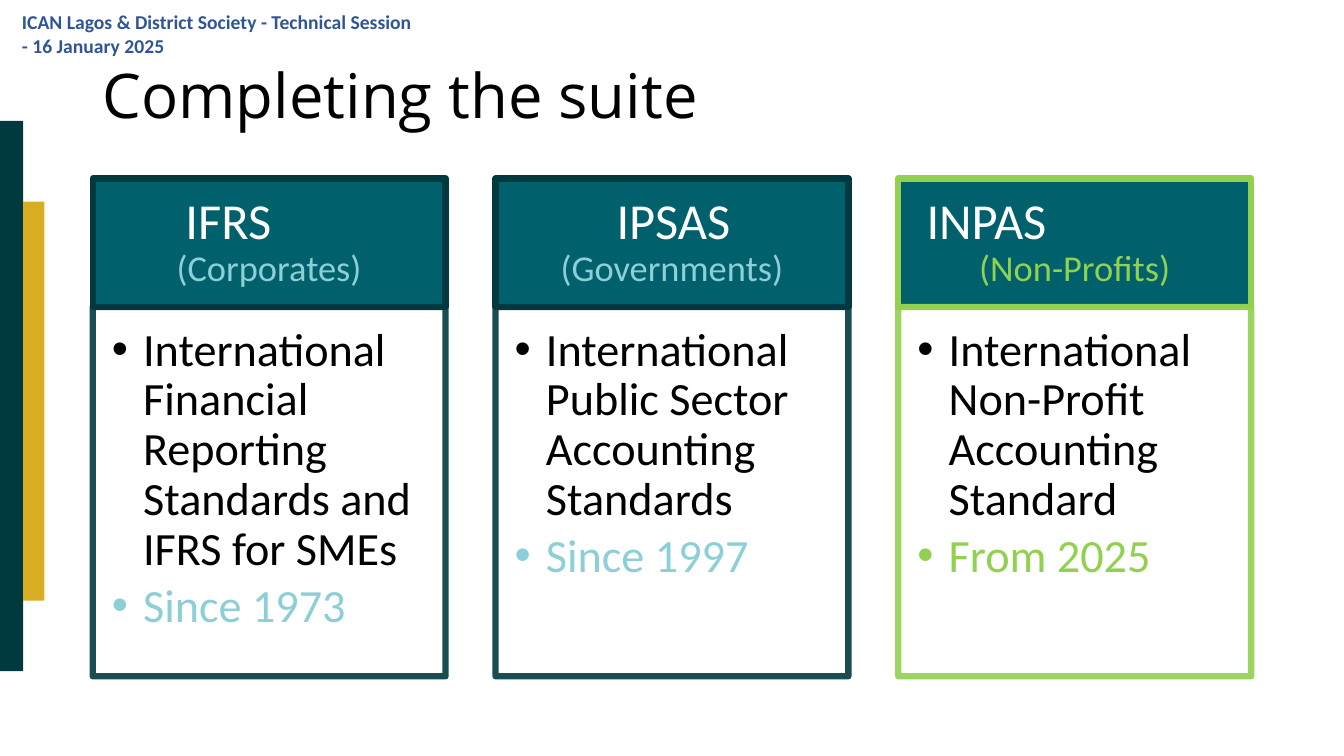
from lxml.etree import SubElement
from pptx import Presentation
from pptx.dml.color import RGBColor
from pptx.enum.shapes import MSO_SHAPE
from pptx.enum.text import MSO_ANCHOR, PP_ALIGN
from pptx.oxml.ns import qn
from pptx.util import Inches, Pt

DARK, TEAL, GOLD = "003A40", "00616C", "D8AD24"
AQUA, LIME = "8DCFD6", "92D050"
SUITE = [
    ("IFRS", 0.64, "(Corporates)",
     "International Financial Reporting Standards and IFRS for SMEs",
     "Since 1973", DARK, AQUA),
    ("IPSAS", 0.92, "(Governments)",
     "International Public Sector Accounting Standards",
     "Since 1997", DARK, AQUA),
    ("INPAS", 0, "(Non-Profits)",
     "International Non-Profit Accounting Standard",
     "From 2025", LIME, LIME),
]


def color(text):
    return RGBColor.from_string(text)


def add_rect(slide, box, fill=None, line=None):
    rect = slide.shapes.add_shape(MSO_SHAPE.RECTANGLE, *map(Inches, box))
    rect.shadow.inherit = False
    if fill:
        rect.fill.solid()
        rect.fill.fore_color.rgb = color(fill)
    else:
        rect.fill.background()
    if line:
        rect.line.color.rgb = color(line)
        rect.line.width = Pt(4.5)
    else:
        rect.line.fill.background()
    return rect


def set_frame(frame, anchor, insets=(0.1, 0.05, 0.1, 0.05)):
    frame.word_wrap = True
    frame.vertical_anchor = anchor
    (frame.margin_left, frame.margin_top,
     frame.margin_right, frame.margin_bottom) = map(Inches, insets)


def write(para, text, size, tint, face="Calibri", align=PP_ALIGN.LEFT,
          space=0.9, bold=False):
    para.text = text
    para.alignment = align
    para.line_spacing = space
    font = para.font
    font.name, font.size, font.bold = face, Pt(size), bold
    font.color.rgb = color(tint)


def set_indent(para, left, first=0):
    props = para._p.get_or_add_pPr()
    props.set("marL", str(Inches(left)))
    props.set("indent", str(Inches(first)))
    return props


def add_text(slide, box, text, size, tint, anchor=MSO_ANCHOR.TOP, **style):
    frame = slide.shapes.add_textbox(*map(Inches, box)).text_frame
    set_frame(frame, anchor)
    write(frame.paragraphs[0], text, size, tint, **style)


def add_head(slide, box, name, indent, group, line, tint):
    frame = add_rect(slide, box, TEAL, line).text_frame
    set_frame(frame, MSO_ANCHOR.MIDDLE, (0.28, 0.16, 0.28, 0.16))
    top = frame.paragraphs[0]
    set_indent(top, indent)
    write(top, name, 36, "FFFFFF")
    write(frame.add_paragraph(), group, 26, tint, align=PP_ALIGN.CENTER)


def add_body(slide, box, title, date, line, tint):
    rect = add_rect(slide, box, line=line)
    shade = rect.line.fill._xPr.find(qn("a:solidFill"))[0]
    SubElement(shade, qn("a:alpha")).set("val", "90000")
    frame = rect.text_frame
    set_frame(frame, MSO_ANCHOR.TOP, (0.19, 0.19, 0.26, 0.29))
    paras = frame.paragraphs[0], frame.add_paragraph()
    for para, text, ink in zip(paras, (title, date), ("000000", tint)):
        props = set_indent(para, 0.31, -0.31)
        SubElement(props, qn("a:buFont")).set("typeface", "Arial")
        SubElement(props, qn("a:buChar")).set("char", "•")
        write(para, text, 33, ink)
        para.space_after = Pt(5)


def add_card(slide, box, name, indent, group, title, date, line, tint):
    left, top, width, height = box
    head = 1.275
    add_head(slide, (left, top, width, head), name, indent, group, line, tint)
    add_body(slide, (left, top + head, width, height - head),
             title, date, line, tint)


def add_suite(slide, box):
    left, top, width, height = box
    card = 3.5
    step = (width - card) / (len(SUITE) - 1)
    for i, data in enumerate(SUITE):
        add_card(slide, (left + i * step, top, card, height), *data)


def add_frame(slide):
    add_rect(slide, (0, 1.2, 0.23, 5.46), DARK)
    add_rect(slide, (0.23, 2, 0.21, 3.96), GOLD)
    add_text(slide, (0.12, 0.05, 4.1, 0.4),
             "ICAN Lagos & District Society - Technical Session"
             " - 16 January 2025", 14, "2F5597", space=1.0, bold=True)


def main():
    deck = Presentation()
    deck.slide_width, deck.slide_height = Inches(13.33), Inches(7.5)
    slide = deck.slides.add_slide(deck.slide_layouts[6])
    add_frame(slide)
    add_text(slide, (0.92, 0.25, 11.5, 1.45), "Completing the suite", 44,
             "000000", MSO_ANCHOR.MIDDLE, face="Open Sans")
    add_suite(slide, (0.92, 1.77, 11.49, 4.94))
    deck.save("out.pptx")


if __name__ == "__main__":
    main()
